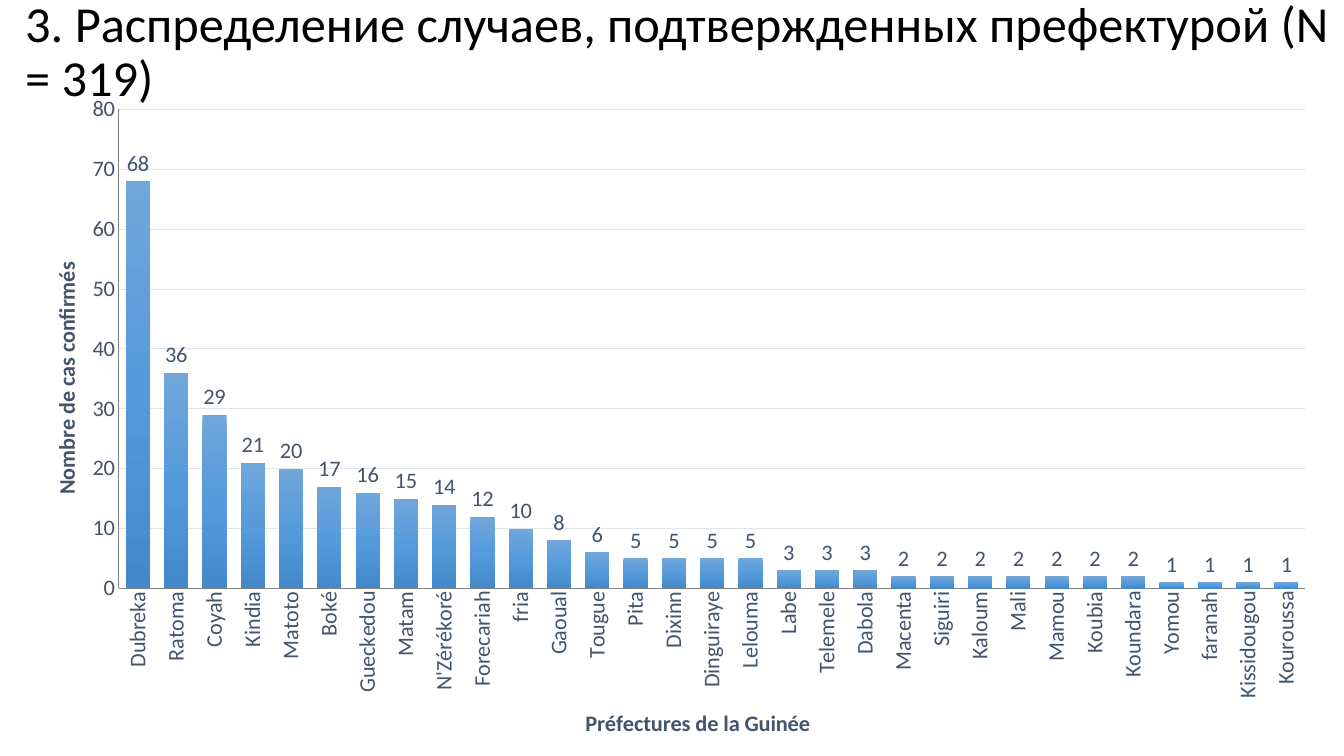
from copy import deepcopy
from dataclasses import dataclass

from pptx import Presentation
from pptx.chart.axis import _BaseAxis
from pptx.chart.chart import Chart
from pptx.chart.data import CategoryChartData
from pptx.chart.series import BarSeries
from pptx.dml.color import RGBColor
from pptx.enum.chart import XL_CHART_TYPE, XL_LABEL_POSITION, XL_TICK_MARK
from pptx.enum.text import MSO_ANCHOR, MSO_AUTO_SIZE, PP_ALIGN
from pptx.oxml import parse_xml
from pptx.oxml.ns import nsdecls, qn
from pptx.slide import Slide
from pptx.text.text import Font
from pptx.util import Inches, Pt


@dataclass(frozen=True)
class Theme:
    font: str = "Calibri"
    title_size: int = 36
    chart_size: int = 16
    title_color: str = "000000"
    chart_color: str = "44546A"
    axis_color: str = "808080"
    grid_color: str = "E0E5EB"
    line_width: float = 0.75
    bar_gradient: tuple[tuple[float, str], ...] = (
        (0, "71A6DB"), (0.5, "559BDB"), (1, "448ACA"))


@dataclass(frozen=True)
class AxisStyle:
    title: str
    title_position: tuple[float, float]
    title_rotation: int
    label_rotation: int


THEME = Theme()
PREFECTURE_AXIS = AxisStyle("Préfectures de la Guinée", (0.43, 0.95), 0, -90)
CASES_AXIS = AxisStyle("Nombre de cas confirmés", (0.02, 0.27), -90, 0)
PLOT_AREA = {"x": 0.075, "y": 0.038, "w": 0.911, "h": 0.734}
CONFIRMED_CASES = {
    "Dubreka": 68, "Ratoma": 36, "Coyah": 29, "Kindia": 21, "Matoto": 20,
    "Boké": 17, "Gueckedou": 16, "Matam": 15, "N'Zérékoré": 14,
    "Forecariah": 12, "fria": 10, "Gaoual": 8, "Tougue": 6, "Pita": 5,
    "Dixinn": 5, "Dinguiraye": 5, "Lelouma": 5, "Labe": 3, "Telemele": 3,
    "Dabola": 3, "Macenta": 2, "Siguiri": 2, "Kaloum": 2, "Mali": 2,
    "Mamou": 2, "Koubia": 2, "Koundara": 2, "Yomou": 1, "faranah": 1,
    "Kissidougou": 1, "Kouroussa": 1,
}


def style_font(font: Font, size: int, color: str, bold: bool = False) -> None:
    font.name = THEME.font
    font.size = Pt(size)
    font.bold = bold
    font.color.rgb = RGBColor.from_string(color)


def manual_layout(target: str, **fractions: float):
    modes = "".join(f'<c:{key}Mode val="edge"/>' for key in ("x", "y"))
    values = "".join(f'<c:{key} val="{value}"/>' for key, value in fractions.items())
    return parse_xml(f'<c:layout {nsdecls("c")}><c:manualLayout>{target}{modes}{values}'
                     '</c:manualLayout></c:layout>')


def rotate(body_properties, degrees: int) -> None:
    body_properties.set("rot", str(degrees * 60000))
    body_properties.set("vert", "horz")


def add_title(slide: Slide) -> None:
    title = slide.shapes.title
    title.left, title.top = Inches(0.15), Inches(0.16)
    title.width, title.height = Inches(13.18), Inches(1.28)
    frame = title.text_frame
    frame.word_wrap = True
    frame.auto_size = MSO_AUTO_SIZE.NONE
    frame.vertical_anchor = MSO_ANCHOR.MIDDLE
    frame.margin_bottom = Inches(0.59)
    paragraph = frame.paragraphs[0]
    paragraph.alignment = PP_ALIGN.LEFT
    paragraph.line_spacing = 0.9
    run = paragraph.add_run()
    run.text = "3. Распределение случаев, подтвержденных префектурой (N = 319)"
    style_font(run.font, THEME.title_size, THEME.title_color)


def style_axis(axis: _BaseAxis, style: AxisStyle) -> None:
    axis.major_tick_mark = axis.minor_tick_mark = XL_TICK_MARK.NONE
    axis.format.line.color.rgb = RGBColor.from_string(THEME.axis_color)
    axis.format.line.width = Pt(THEME.line_width)
    style_font(axis.tick_labels.font, THEME.chart_size, THEME.chart_color)
    rotate(axis._element.find(qn("c:txPr")).find(qn("a:bodyPr")), style.label_rotation)
    frame = axis.axis_title.text_frame
    run = frame.paragraphs[0].add_run()
    run.text = style.title
    style_font(run.font, THEME.chart_size, THEME.chart_color, bold=True)
    rotate(frame._txBody.find(qn("a:bodyPr")), style.title_rotation)
    title = axis.axis_title._element
    for layout in title.findall(qn("c:layout")):
        title.remove(layout)
    x, y = style.title_position
    title.find(qn("c:tx")).addnext(manual_layout("", x=x, y=y))


def style_bars(series: BarSeries) -> None:
    fill = series.format.fill
    fill.gradient()
    fill.gradient_angle = 270
    stops = series._element.find(".//" + qn("a:gsLst"))
    stops.append(deepcopy(stops[-1]))
    for stop, (position, color) in zip(fill.gradient_stops, THEME.bar_gradient):
        stop.position = position
        stop.color.rgb = RGBColor.from_string(color)
    series.format.line.fill.background()
    labels = series.data_labels
    labels.show_value = True
    labels.position = XL_LABEL_POSITION.OUTSIDE_END
    style_font(labels.font, THEME.chart_size, THEME.chart_color)


def style_chart(chart: Chart) -> None:
    chart.has_legend = False
    chart.has_title = False
    style_font(chart.font, THEME.chart_size, THEME.title_color)
    style_axis(chart.category_axis, PREFECTURE_AXIS)
    style_axis(chart.value_axis, CASES_AXIS)
    cases_axis = chart.value_axis
    cases_axis.minimum_scale, cases_axis.maximum_scale = 0, 80
    cases_axis.major_unit = 10
    grid_line = cases_axis.major_gridlines.format.line
    grid_line.color.rgb = RGBColor.from_string(THEME.grid_color)
    grid_line.width = Pt(THEME.line_width)
    plot = chart.plots[0]
    plot.gap_width, plot.overlap = 58, -24
    plot.vary_by_categories = False
    style_bars(plot.series[0])
    plot_area = chart._chartSpace.find(".//" + qn("c:plotArea"))
    for layout in plot_area.findall(qn("c:layout")):
        plot_area.remove(layout)
    plot_area.insert(0, manual_layout('<c:layoutTarget val="inner"/>', **PLOT_AREA))


def add_cases_chart(slide: Slide) -> None:
    data = CategoryChartData()
    data.categories = list(CONFIRMED_CASES)
    data.add_series("Series 1", list(CONFIRMED_CASES.values()))
    frame = slide.shapes.add_chart(
        XL_CHART_TYPE.COLUMN_CLUSTERED,
        Inches(0.21), Inches(0.84), Inches(12.92), Inches(6.55), data)
    style_chart(frame.chart)


def main() -> None:
    presentation = Presentation()
    presentation.slide_width, presentation.slide_height = Inches(13.33), Inches(7.5)
    slide = presentation.slides.add_slide(presentation.slide_layouts.get_by_name("Title Only"))
    add_title(slide)
    add_cases_chart(slide)
    presentation.save("out.pptx")


if __name__ == "__main__":
    main()
